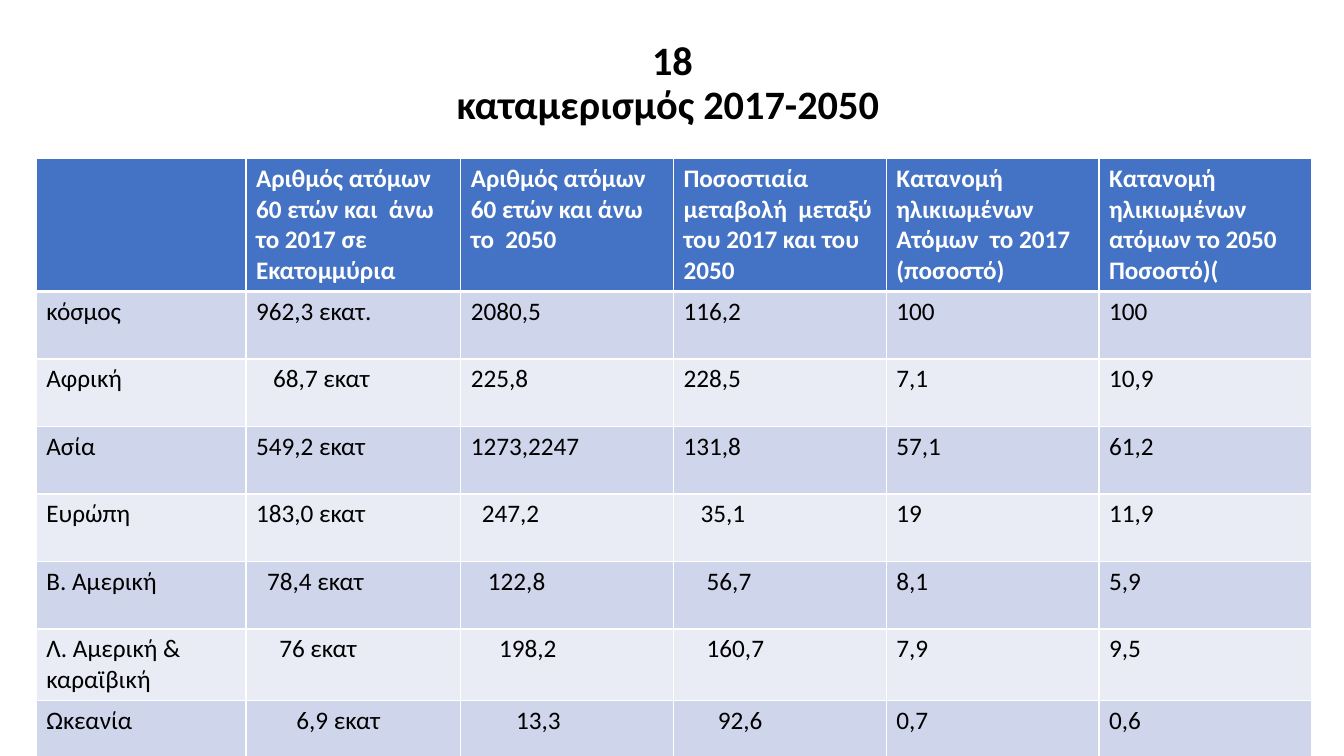
from typing import NamedTuple

from lxml.etree import SubElement
from pptx import Presentation
from pptx.dml.color import RGBColor
from pptx.enum.text import MSO_ANCHOR, MSO_AUTO_SIZE, PP_ALIGN
from pptx.oxml.ns import qn
from pptx.util import Pt

PX = 9144
FONT = "Calibri"
COLORS = {"header": "4472C4", "odd": "CFD5EA", "even": "E9EBF5",
          "white": "FFFFFF", "black": "000000"}
COL_WIDTHS = [208, 213, 211, 211, 211, 211]
HEADER_HEIGHT, ROW_HEIGHT = 108, 67


class Entry(NamedTuple):
    text: str
    indent: int = 0


class Look(NamedTuple):
    fill: str
    color: str
    bold: bool
    top: int
    bottom: int


HEADERS = [
    "",
    "Αριθμός ατόμων 60 ετών και  άνω το 2017 σε\nΕκατομμύρια",
    "Αριθμός ατόμων 60 ετών και άνω το  2050",
    "Ποσοστιαία μεταβολή  μεταξύ του 2017 και του 2050",
    "Κατανομή ηλικιωμένων\nΑτόμων  το 2017\n(ποσοστό)",
    "Κατανομή ηλικιωμένων ατόμων το 2050\nΠοσοστό)(",
]
REGIONS = [
    [Entry("κόσμος"), Entry("962,3 εκατ."), Entry("2080,5"), Entry("116,2"),
     Entry("100"), Entry("100")],
    [Entry("Αφρική"), Entry("68,7 εκατ", 17), Entry("225,8"), Entry("228,5"),
     Entry("7,1"), Entry("10,9")],
    [Entry("Ασία"), Entry("549,2 εκατ"), Entry("1273,2247"), Entry("131,8"),
     Entry("57,1"), Entry("61,2")],
    [Entry("Ευρώπη"), Entry("183,0 εκατ"), Entry("247,2", 11), Entry("35,1", 17),
     Entry("19"), Entry("11,9")],
    [Entry("Β. Αμερική"), Entry("78,4 εκατ", 11), Entry("122,8", 17), Entry("56,7", 23),
     Entry("8,1"), Entry("5,9")],
    [Entry("Λ. Αμερική & καραϊβική"), Entry("76 εκατ", 23), Entry("198,2", 28),
     Entry("160,7", 23), Entry("7,9"), Entry("9,5")],
    [Entry("Ωκεανία"), Entry("6,9 εκατ", 40), Entry("13,3", 45), Entry("92,6", 34),
     Entry("0,7"), Entry("0,6")],
]


def set_font(p, size: float, color: str, bold: bool) -> None:
    p.font.name = FONT
    p.font.size = Pt(size)
    p.font.bold = bold
    p.font.color.rgb = RGBColor.from_string(COLORS[color])


def add_borders(cell, top: int, bottom: int) -> None:
    tc_pr = cell._tc.get_or_add_tcPr()
    for side, width in (("L", 1), ("R", 1), ("T", top), ("B", bottom)):
        ln = SubElement(tc_pr, qn(f"a:ln{side}"), w=str(Pt(width)))
        fill = SubElement(ln, qn("a:solidFill"))
        SubElement(fill, qn("a:srgbClr"), val=COLORS["white"])


def fill_cell(cell, entry: Entry, look: Look) -> None:
    add_borders(cell, look.top, look.bottom)
    cell.fill.solid()
    cell.fill.fore_color.rgb = RGBColor.from_string(COLORS[look.fill])
    cell.text_frame.text = entry.text
    for p in cell.text_frame.paragraphs:
        set_font(p, 18, look.color, look.bold)
        if entry.indent:
            p._p.get_or_add_pPr().set("marL", str(entry.indent * PX))


def add_title(s) -> None:
    sp = s.shapes.title
    sp.left, sp.top, sp.width, sp.height = (v * PX for v in (92, 40, 1150, 88))
    tf = sp.text_frame
    tf.word_wrap = True
    tf.auto_size = MSO_AUTO_SIZE.NONE
    tf.vertical_anchor = MSO_ANCHOR.MIDDLE
    p = tf.paragraphs[0]
    p.text = "18\vκαταμερισμός 2017-2050 "
    p.alignment = PP_ALIGN.CENTER
    p.line_spacing = 0.9
    set_font(p, 28.8, "black", True)


def add_region_table(s) -> None:
    rows = [[Entry(text) for text in HEADERS], *REGIONS]
    heights = [HEADER_HEIGHT] + [ROW_HEIGHT] * len(REGIONS)
    table = s.shapes.add_table(len(rows), len(COL_WIDTHS), 36 * PX, 157 * PX,
                               sum(COL_WIDTHS) * PX, sum(heights) * PX).table
    for column, width in zip(table.columns, COL_WIDTHS):
        column.width = width * PX
    for i, (entries, height) in enumerate(zip(rows, heights)):
        table.rows[i].height = height * PX
        if i == 0:
            look = Look("header", "white", True, 1, 3)
        else:
            look = Look("odd" if i % 2 else "even", "black", False, 3 if i == 1 else 1, 1)
        for j, entry in enumerate(entries):
            fill_cell(table.cell(i, j), entry, look)


def main() -> None:
    """Build the slide on the 2017-2050 distribution of people aged 60 and over."""
    prs = Presentation()
    prs.slide_width, prs.slide_height = 1333 * PX, 750 * PX
    s = prs.slides.add_slide(prs.slide_layouts[5])
    add_title(s)
    add_region_table(s)
    prs.save("out.pptx")


if __name__ == "__main__":
    main()
